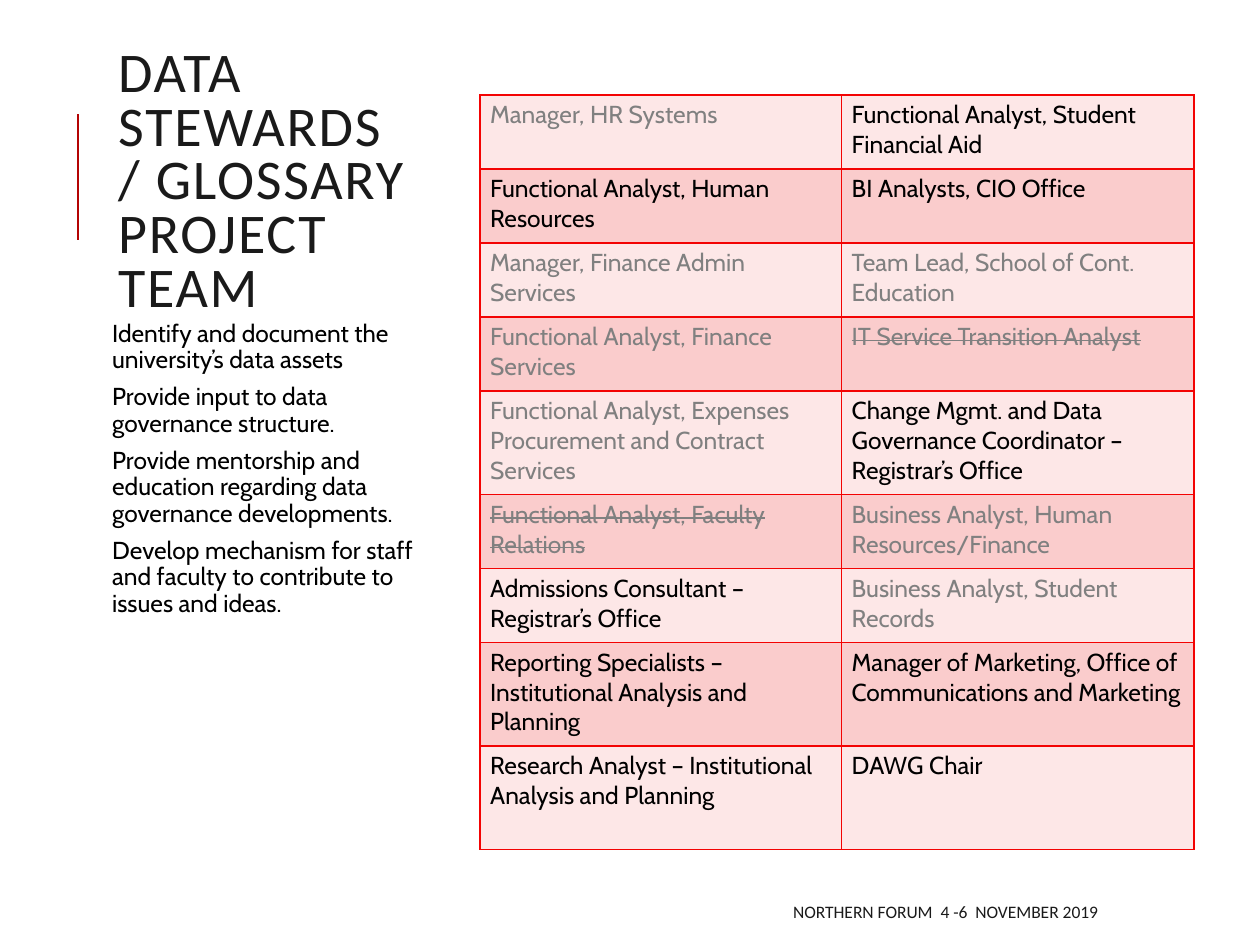
from lxml import etree
from pptx import Presentation
from pptx.dml.color import RGBColor
from pptx.enum.shapes import MSO_CONNECTOR as Connector
from pptx.enum.text import MSO_ANCHOR as Anchor, PP_ALIGN as Align
from pptx.oxml.ns import qn
from pptx.util import Pt

COLORS = {
    "accent": "B40404", "heading": "1A1A1A", "active": "000000",
    "inactive": "808080", "border": "F30303", "light": "FDE7E7", "dark": "FACCCC",
}

DUTIES = [
    "Identify and document the university’s data assets",
    "Provide input to data governance structure.",
    "Provide mentorship and education regarding data governance developments.",
    "Develop mechanism for staff and faculty to contribute to issues and ideas.",
]

# Each member is a role and its status: active, inactive (grey) or removed (struck)
MEMBERS = [
    [("Manager, HR Systems", "inactive"),
     ("Functional Analyst, Student Financial Aid", "active")],
    [("Functional Analyst, Human Resources", "active"),
     ("BI Analysts, CIO Office", "active")],
    [("Manager, Finance Admin Services", "inactive"),
     ("Team Lead, School of Cont. Education", "inactive")],
    [("Functional Analyst, Finance Services", "inactive"),
     ("IT Service Transition Analyst", "removed")],
    [("Functional Analyst, Expenses Procurement and Contract Services", "inactive"),
     ("Change Mgmt. and Data Governance Coordinator – Registrar’s Office", "active")],
    [("Functional Analyst, Faculty Relations", "removed"),
     ("Business Analyst, Human Resources/Finance", "inactive")],
    [("Admissions Consultant – Registrar’s Office", "active"),
     ("Business Analyst, Student Records", "inactive")],
    [("Reporting Specialists – Institutional Analysis and Planning", "active"),
     ("Manager of Marketing, Office of Communications and Marketing", "active")],
    [("Research Analyst – Institutional Analysis and Planning", "active"),
     ("DAWG Chair", "active")],
]
SHORT_ROW, TALL_ROW = 42.3, 59.2
TALL_ROWS = {4, 7, 8}


def rgb(name):
    return RGBColor.from_string(COLORS[name])


def write(frame, paragraphs, size=14, font="Cabin", color="active", align=Align.LEFT,
          line=1.0, after=0, spacing=0, strike=False):
    """Fill a text frame with equally formatted paragraphs."""
    frame.word_wrap = True
    for i, text in enumerate(paragraphs):
        paragraph = frame.paragraphs[0] if i == 0 else frame.add_paragraph()
        paragraph.alignment = align
        paragraph.line_spacing = line
        paragraph.space_after = Pt(after)
        run = paragraph.add_run()
        run.text = text
        run.font.size = Pt(size)
        run.font.name = font
        run.font.color.rgb = rgb(color)
        if spacing:
            run.font._element.set("spc", str(spacing * 100))
        if strike:
            run.font._element.set("strike", "sngStrike")


def add_frame(slide, box, inset_x=7.2, inset_y=3.6, anchor=Anchor.TOP):
    frame = slide.shapes.add_textbox(*map(Pt, box)).text_frame
    frame.margin_left = frame.margin_right = Pt(inset_x)
    frame.margin_top = frame.margin_bottom = Pt(inset_y)
    frame.vertical_anchor = anchor
    return frame


def add_title(slide, box):
    left, top, _, _ = box
    # Accent rule beside the title
    x, y = left - 15.8, top + 19
    rule = slide.shapes.add_connector(Connector.STRAIGHT, Pt(x), Pt(y + 72), Pt(x), Pt(y))
    rule.line.color.rgb = rgb("accent")
    rule.line.width = Pt(1.5)
    etree.SubElement(rule._element.spPr, qn("a:effectLst"))
    write(add_frame(slide, box, anchor=Anchor.MIDDLE),
          ["DATA STEWARDS / GLOSSARY PROJECT TEAM"],
          size=32, font="Calibri", color="heading", line=0.8, spacing=1)


def add_duties(slide, box):
    write(add_frame(slide, box, inset_x=3.6), DUTIES, line=0.9, after=6)


def add_footer(slide, box):
    write(add_frame(slide, box, anchor=Anchor.MIDDLE),
          ["NORTHERN FORUM  4 -6  NOVEMBER 2019"],
          size=10, font="Calibri", color="heading", align=Align.RIGHT)


def set_borders(cell, color, width):
    properties = cell._tc.get_or_add_tcPr()
    for side in ("lnL", "lnR", "lnT", "lnB"):
        border = etree.SubElement(properties, qn(f"a:{side}"), w=str(Pt(width)))
        fill = etree.SubElement(border, qn("a:solidFill"))
        etree.SubElement(fill, qn("a:srgbClr"), val=COLORS[color])


def add_member_table(slide, box):
    _, _, width, _ = box
    table = slide.shapes.add_table(len(MEMBERS), 2, *map(Pt, box)).table
    table.first_row = table.horz_banding = False
    first_width = 206.6
    table.columns[0].width = Pt(first_width)
    table.columns[1].width = Pt(width - first_width)
    for r, members in enumerate(MEMBERS):
        table.rows[r].height = Pt(TALL_ROW if r in TALL_ROWS else SHORT_ROW)
        for c, (role, status) in enumerate(members):
            cell = table.cell(r, c)
            cell.margin_left = cell.margin_right = Pt(5.8)
            cell.margin_top = cell.margin_bottom = Pt(2.9)
            set_borders(cell, "border", 1)
            cell.fill.solid()
            cell.fill.fore_color.rgb = rgb("dark" if r % 2 else "light")
            write(cell.text_frame, [role], strike=status == "removed",
                  color="active" if status == "active" else "inactive")


def main():
    deck = Presentation()
    deck.slide_width, deck.slide_height = Pt(720), Pt(540)
    slide = deck.slides.add_slide(deck.slide_layouts[6])
    add_title(slide, (60.5, 46, 185, 118))
    add_duties(slide, (60.5, 180, 185, 310))
    add_footer(slide, (286, 509.8, 348.5, 21.6))
    add_member_table(slide, (274.3, 54.2, 408, 431.4))
    deck.save("out.pptx")


if __name__ == "__main__":
    main()
